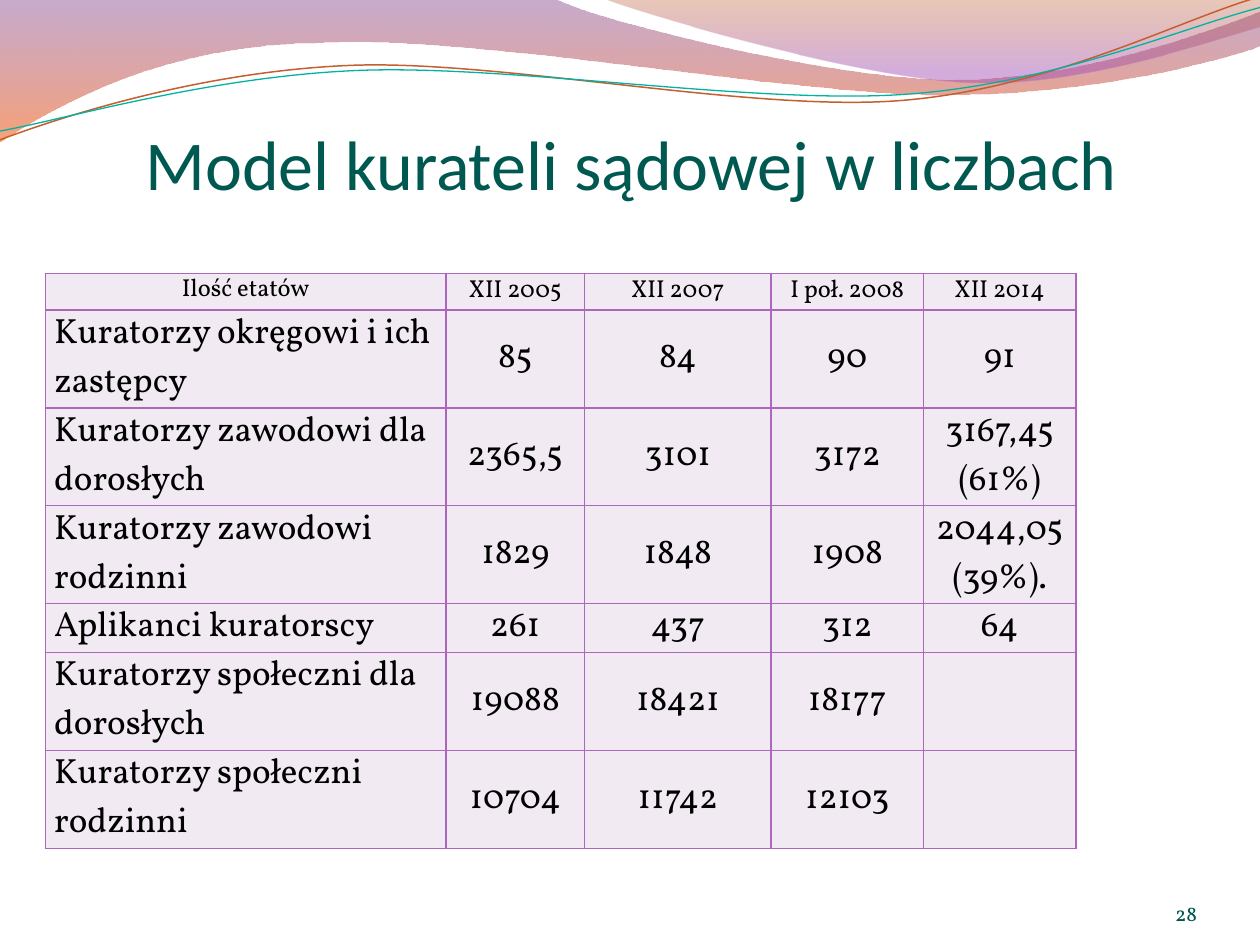
from dataclasses import dataclass

import pptx
import pptx.dml.color
import pptx.enum.text
import pptx.oxml
import pptx.oxml.ns
import pptx.util
from pptx.util import Inches

ALIGN = pptx.enum.text.PP_ALIGN
ANCHOR = pptx.enum.text.MSO_ANCHOR
Point = tuple[float, float]


@dataclass(frozen=True)
class Theme:
    head: str = "005950"
    page: str = "00554C"
    ink: str = "000000"
    cell: str = "F1EAF3"
    grid: str = "AC66BB"
    sans: str = "Calibri"
    serif: str = "Vollkorn"
    title_size: int = 40
    body_size: int = 20
    top_size: int = 14
    page_size: int = 12


@dataclass(frozen=True)
class Stop:
    place: float
    color: str
    alpha: int


@dataclass(frozen=True)
class Wave:
    """A start point, then steps: one point is a line, three are a curve."""
    start: Point
    steps: list[tuple[Point, ...]]
    stops: tuple[Stop, ...] = ()
    color: str = ""
    width: float = 0


THEME = Theme()

WAVES = [
    Wave((0, -0.01), [
        ((4.4, -0.01),),
        ((4.76, 0.17), (6.64, 0.63), (7.58, 0.63)),
        ((8.53, 0.63), (9.58, 0.26), (10, 0.09)),
        ((10.01, 0.36),),
        ((9.83, 0.44), (8.7, 0.76), (7.46, 0.75)),
        ((6.22, 0.75), (3.82, 0.28), (2.57, 0.34)),
        ((1.29, 0.35), (0.46, 0.83), (-0.01, 1.13)),
        ((0, -0.01),),
    ], stops=(Stop(0, "834591", 45), Stop(1, "F35307", 55))),
    Wave((4.79, -0.01), [
        ((5.09, 0.11), (6.82, 0.62), (7.69, 0.65)),
        ((8.56, 0.69), (9.61, 0.32), (10, 0.21)),
        ((10, 0),),
        ((4.79, -0.01),),
    ], stops=(Stop(0, "B74915", 30), Stop(0.8, "A14BB4", 45))),
    Wave((0, 1.11), [
        ((0.48, 0.93), (1.58, 0.57), (2.77, 0.52)),
        ((3.95, 0.47), (5.93, 0.89), (7.13, 0.8)),
        ((8.33, 0.71), (9.38, 0.15), (9.98, -0.02)),
    ], color="C45F30", width=0.85),
    Wave((0, 1.04), [
        ((0.47, 0.96), (1.64, 0.61), (2.83, 0.56)),
        ((4.03, 0.51), (5.97, 0.83), (7.17, 0.75)),
        ((8.36, 0.67), (9.41, 0.21), (10, 0.06)),
    ], color="02B2A1", width=0.75),
]

WIDTHS = [3.18, 1.1, 1.48, 1.21, 1.21]
HEIGHTS = [0.29, 0.68, 0.68, 0.68, 0.36, 0.68, 0.68]
ROWS = [
    ["Ilość etatów", "XII 2005", "XII 2007", "I poł. 2008", "XII 2014"],
    ["Kuratorzy okręgowi i ich zastępcy", "85", "84", "90", "91"],
    ["Kuratorzy zawodowi dla dorosłych", "2365,5", "3101", "3172", "3167,45 (61%)"],
    ["Kuratorzy zawodowi rodzinni", "1829", "1848", "1908", "2044,05 (39%)."],
    ["Aplikanci kuratorscy", "261", "437", "312", "64"],
    ["Kuratorzy społeczni dla dorosłych", "19088", "18421", "18177", ""],
    ["Kuratorzy społeczni rodzinni", "10704", "11742", "12103", ""],
]


def tint(code: str) -> pptx.dml.color.RGBColor:
    return pptx.dml.color.RGBColor.from_string(code)


def apply(item, values: dict) -> None:
    for name, value in values.items():
        setattr(item, name, value)


def write(frame, text: str, size: int, face: str, color: str, align) -> None:
    part = frame.paragraphs[0]
    part.alignment = align
    run = part.add_run()
    run.text = text
    apply(run.font, {"size": pptx.util.Pt(size), "name": face, "bold": False})
    run.font.color.rgb = tint(color)


def bend(shape, wave: Wave) -> None:
    """Join each three line segments that stand for a curve into one Bezier."""
    lines = iter(list(shape.element.spPr.iter(pptx.oxml.ns.qn("a:lnTo"))))
    for step in wave.steps:
        group = [next(lines) for _ in step]
        if len(group) == 1:
            continue
        curve = pptx.oxml.parse_xml(f'<a:cubicBezTo {pptx.oxml.ns.nsdecls("a")}/>')
        group[0].addprevious(curve)
        for line in group:
            curve.append(line[0])
            line.getparent().remove(line)


def draw_wave(slide, wave: Wave) -> None:
    dots = [wave.start, *(dot for step in wave.steps for dot in step)]
    first, *rest = [(Inches(x), Inches(y)) for x, y in dots]
    pen = slide.shapes.build_freeform(*first)
    pen.add_line_segments(rest, close=bool(wave.stops))
    shape = pen.convert_to_shape()
    bend(shape, wave)
    shape.shadow.inherit = False
    if not wave.stops:
        shape.fill.background()
        shape.line.color.rgb = tint(wave.color)
        shape.line.width = pptx.util.Pt(wave.width)
        return
    shape.fill.gradient()
    shape.fill.gradient_angle = 270
    for mark, stop in zip(shape.fill.gradient_stops, wave.stops):
        mark.position = stop.place
        mark.color.rgb = tint(stop.color)
    tag = pptx.oxml.ns.qn("a:srgbClr")
    for node, stop in zip(shape.element.spPr.iter(tag), wave.stops):
        node.append(pptx.oxml.parse_xml(
            f'<a:alpha {pptx.oxml.ns.nsdecls("a")} val="{stop.alpha * 1000}"/>'))
    shape.line.fill.background()


def frame_cell(cell) -> None:
    props = cell._tc.get_or_add_tcPr()
    for side in "LRTB":
        props.append(pptx.oxml.parse_xml(
            f'<a:ln{side} {pptx.oxml.ns.nsdecls("a")} w="12700"><a:solidFill>'
            f'<a:srgbClr val="{THEME.grid}"/></a:solidFill></a:ln{side}>'))
    cell.fill.solid()
    cell.fill.fore_color.rgb = tint(THEME.cell)


def draw_table(slide) -> None:
    table = slide.shapes.add_table(
        len(ROWS), len(WIDTHS), Inches(0.36), Inches(2.17),
        Inches(sum(WIDTHS)), Inches(sum(HEIGHTS))).table
    apply(table, {"first_row": False, "horz_banding": False})
    for band, width in zip(table.columns, WIDTHS):
        band.width = Inches(width)
    for band, height in zip(table.rows, HEIGHTS):
        band.height = Inches(height)
    for r, row in enumerate(ROWS):
        for c, text in enumerate(row):
            cell = table.cell(r, c)
            frame_cell(cell)
            apply(cell, {
                "margin_left": Inches(0.07), "margin_right": Inches(0.07),
                "margin_top": 0, "margin_bottom": 0,
                "vertical_anchor": ANCHOR.MIDDLE if r or c else ANCHOR.TOP})
            if text:
                write(cell.text_frame, text, THEME.body_size if r else THEME.top_size,
                      THEME.serif, THEME.ink, ALIGN.LEFT if r and not c else ALIGN.CENTER)


def set_frame(frame, top: float) -> None:
    apply(frame, {
        "margin_left": 0, "margin_right": 0, "margin_bottom": 0,
        "margin_top": Inches(top), "word_wrap": True,
        "vertical_anchor": ANCHOR.BOTTOM,
        "auto_size": pptx.enum.text.MSO_AUTO_SIZE.NONE})


def main() -> None:
    deck = pptx.Presentation()
    apply(deck, {"slide_width": Inches(10), "slide_height": Inches(7.5)})
    slide = deck.slides.add_slide(deck.slide_layouts[5])
    for wave in WAVES:
        draw_wave(slide, wave)
    title = slide.shapes.title
    apply(title, {"left": Inches(0.51), "top": Inches(0.91),
                  "width": Inches(9), "height": Inches(0.71)})
    set_frame(title.text_frame, 0.05)
    write(title.text_frame, "Model kurateli sądowej w liczbach",
          THEME.title_size, THEME.sans, THEME.head, ALIGN.CENTER)
    draw_table(slide)
    page = slide.shapes.add_textbox(Inches(8.67), Inches(6.95), Inches(0.83), Inches(0.4))
    set_frame(page.text_frame, 0)
    write(page.text_frame, "28", THEME.page_size, THEME.serif, THEME.page, ALIGN.RIGHT)
    deck.save("out.pptx")


if __name__ == "__main__":
    main()
